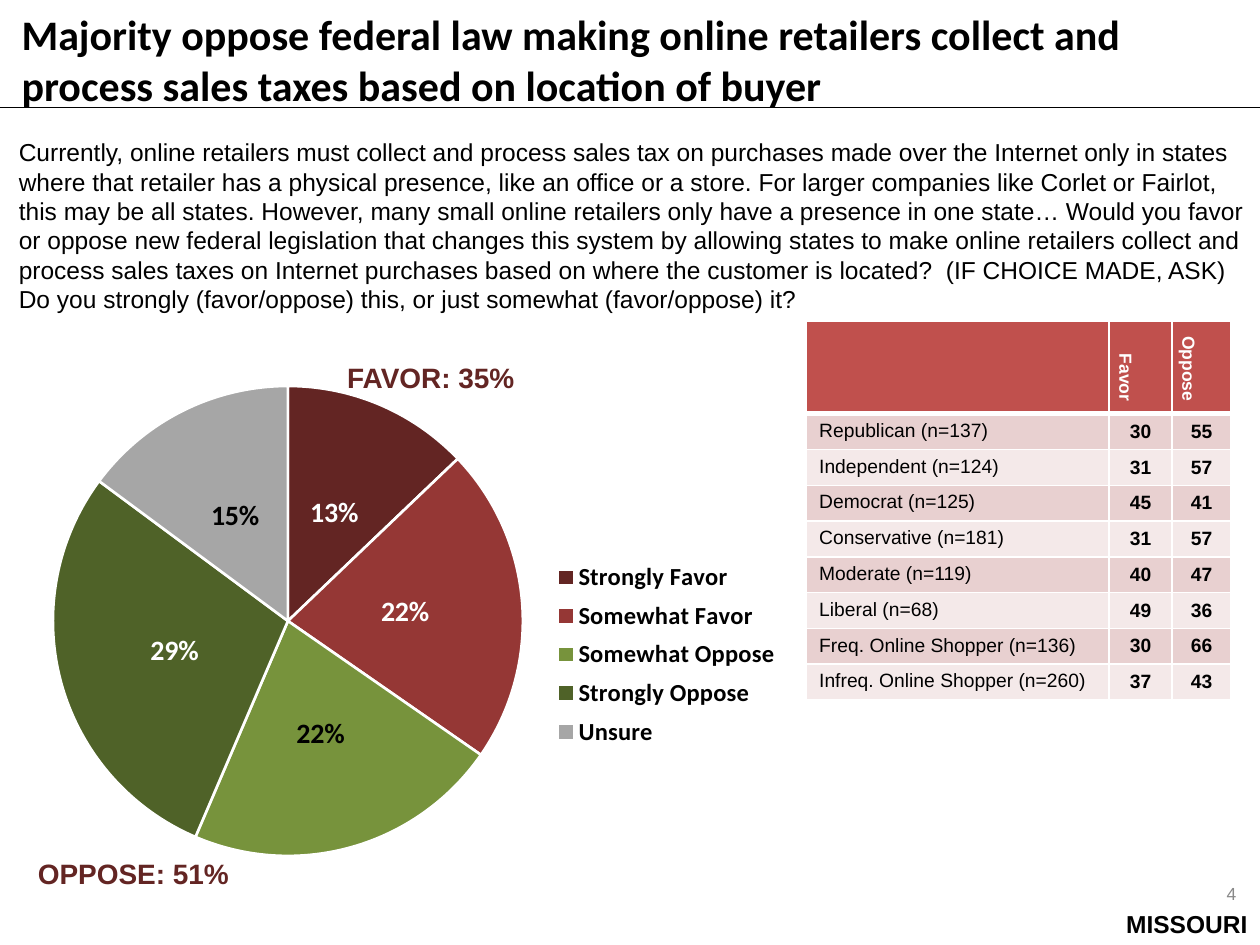
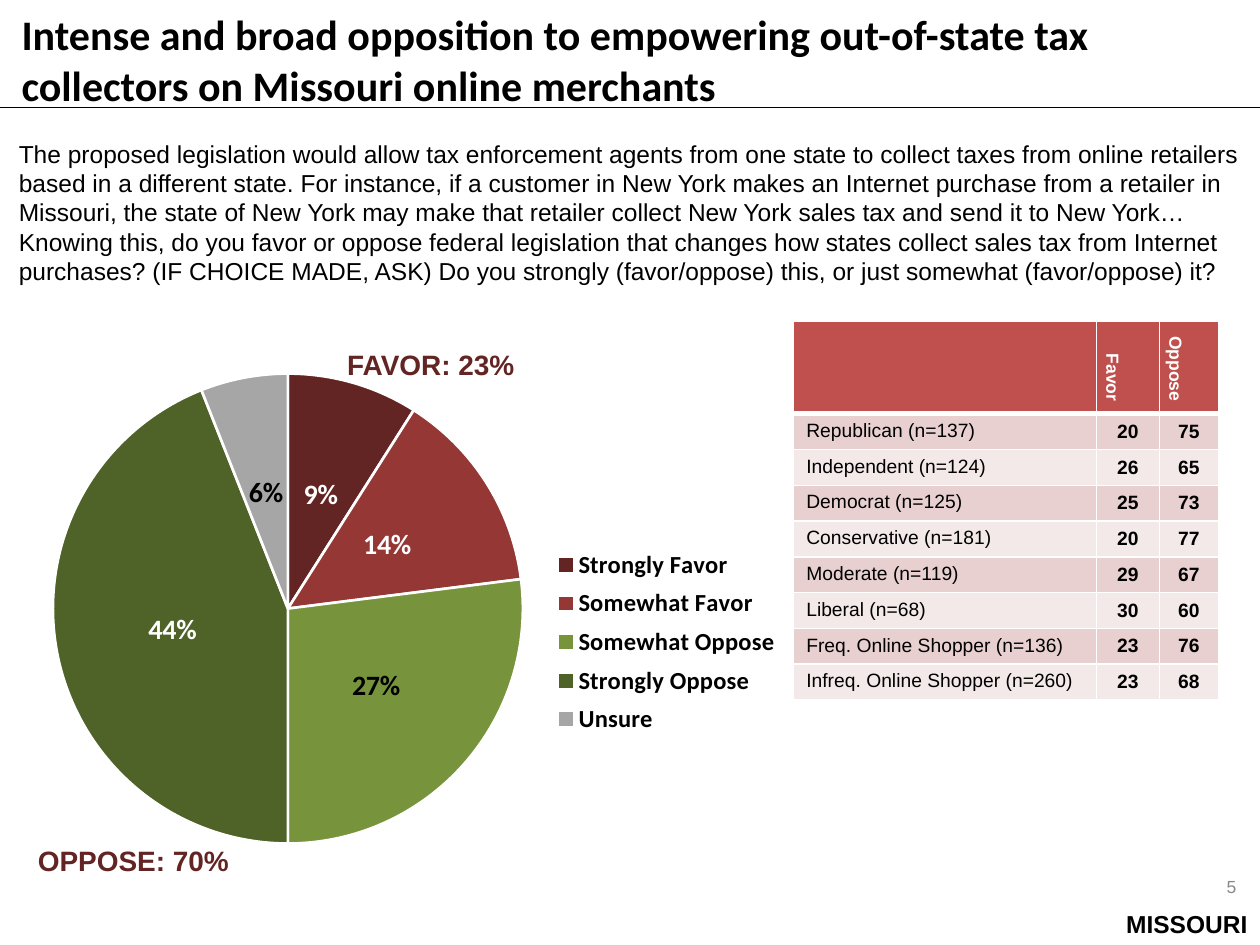
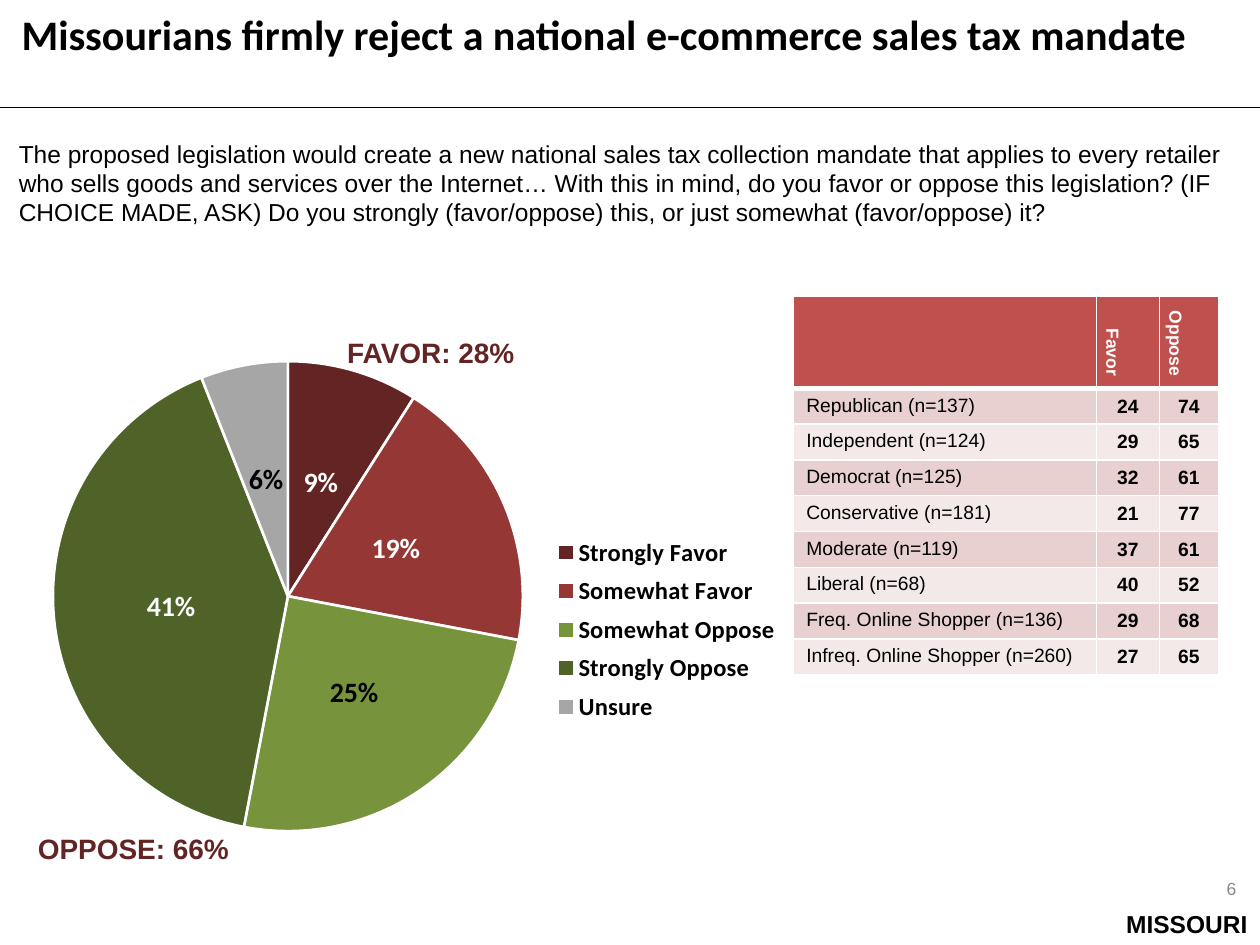
import pptx
import pptx.chart.data
import pptx.dml.color
import pptx.enum.chart
import pptx.enum.shapes
import pptx.enum.text
import pptx.oxml
import pptx.oxml.ns
import pptx.util
from lxml import etree

Cm = pptx.util.Cm
Pt = pptx.util.Pt
Align = pptx.enum.text.PP_ALIGN
Anchor = pptx.enum.text.MSO_ANCHOR
AutoSize = pptx.enum.text.MSO_AUTO_SIZE

# Answers and voter groups asked about on every slide
ANSWERS = {
    "Strongly Favor": "632523",
    "Somewhat Favor": "953735",
    "Somewhat Oppose": "77933C",
    "Strongly Oppose": "4F6228",
    "Unsure": "A6A6A6",
}
DARK_LABELS = ("Somewhat Oppose", "Unsure")
GROUPS = [
    "Republican (n=137)", "Independent (n=124)", "Democrat (n=125)",
    "Conservative (n=181)", "Moderate (n=119)", "Liberal (n=68)",
    "Freq. Online Shopper (n=136)", "Infreq. Online Shopper (n=260)",
]

# What differs from slide to slide
SLIDES = [
    {
        "title": "Majority oppose federal law making online retailers collect and "
                 "process sales taxes based on location of buyer",
        "title_width": 23.32,
        "question": "Currently, online retailers must collect and process sales tax on "
                    "purchases made over the Internet only in states where that retailer has "
                    "a physical presence, like an office or a store. For larger companies "
                    "like Corlet or Fairlot, this may be all states. However, many small "
                    "online retailers only have a presence in one state… Would you favor or "
                    "oppose new federal legislation that changes this system by allowing "
                    "states to make online retailers collect and process sales taxes on "
                    "Internet purchases based on where the customer is located?  (IF CHOICE "
                    "MADE, ASK) Do you strongly (favor/oppose) this, or just somewhat "
                    "(favor/oppose) it?",
        "question_box": (2.64, 3.84),
        "number": "4", "number_top": 17.5,
        "shares": (13, 22, 22, 29, 15), "chart_top": 6.88,
        "favor": "FAVOR: 35%", "oppose": "OPPOSE: 51%",
        "table_at": (16.26, 6.48),
        "by_group": [(30, 55), (31, 57), (45, 41), (31, 57),
                     (40, 47), (49, 36), (30, 66), (37, 43)],
    },
    {
        "title": "Intense and broad opposition to empowering out-of-state tax "
                 "collectors on Missouri online merchants",
        "title_width": 23.32,
        "question": "The proposed legislation would allow tax enforcement agents from one "
                    "state to collect taxes from online retailers based in a different state. "
                    "For instance, if a customer in New York makes an Internet purchase from "
                    "a retailer in Missouri, the state of New York may make that retailer "
                    "collect New York sales tax and send it to New York… Knowing this, do you "
                    "favor or oppose federal legislation that changes how states collect "
                    "sales tax from Internet purchases? (IF CHOICE MADE, ASK) Do you strongly "
                    "(favor/oppose) this, or just somewhat (favor/oppose) it?",
        "question_box": (2.67, 3.25),
        "number": "5", "number_top": 17.37,
        "shares": (9, 14, 27, 44, 6), "chart_top": 6.63,
        "favor": "FAVOR: 23%", "oppose": "OPPOSE: 70%",
        "table_at": (16, 6.48),
        "by_group": [(20, 75), (26, 65), (25, 73), (20, 77),
                     (29, 67), (30, 60), (23, 76), (23, 68)],
    },
    {
        "title": "Missourians firmly reject a national e-commerce sales tax mandate",
        "title_width": 25.22,
        "question": "The proposed legislation would create a new national sales tax "
                    "collection mandate that applies to every retailer who sells goods and "
                    "services over the Internet… With this in mind, do you favor or oppose "
                    "this legislation? (IF CHOICE MADE, ASK) Do you strongly (favor/oppose) "
                    "this, or just somewhat (favor/oppose) it?",
        "question_box": (2.67, 2.06),
        "number": "6", "number_top": 17.4,
        "shares": (9, 19, 25, 41, 6), "chart_top": 6.38,
        "favor": "FAVOR: 28%", "oppose": "OPPOSE: 66%",
        "table_at": (16, 5.97),
        "by_group": [(24, 74), (29, 65), (32, 61), (21, 77),
                     (37, 61), (40, 52), (29, 68), (27, 65)],
    },
]


def color(hex_string):
    return pptx.dml.color.RGBColor.from_string(hex_string)


def fill_solid(item, hex_string):
    item.fill.solid()
    item.fill.fore_color.rgb = color(hex_string)


def set_font(font, size, ink="000000", bold=False, name="Arial"):
    font.name, font.size, font.bold = name, Pt(size), bold
    font.color.rgb = color(ink)


def write(text_frame, text, align=Align.LEFT, **font_format):
    paragraph = text_frame.paragraphs[0]
    paragraph.alignment = align
    run = paragraph.add_run()
    run.text = text
    set_font(run.font, **font_format)


def border_cell(cell, top=1, bottom=1):
    """White lines on all four sides of a table cell, widths in points."""
    properties = cell._tc.get_or_add_tcPr()
    widths = {"lnL": 1, "lnR": 1, "lnT": top, "lnB": bottom}
    for position, (tag, width) in enumerate(widths.items()):
        line = pptx.oxml.parse_xml(
            f'<a:{tag} {pptx.oxml.ns.nsdecls("a")} w="{Pt(width)}">'
            f'<a:solidFill><a:srgbClr val="FFFFFF"/></a:solidFill></a:{tag}>')
        properties.insert(position, line)


def place_in_chart(element, x, y, width, height, inner=False):
    """Fix a plot area or legend at fractions of the chart."""
    for old in element.findall(pptx.oxml.ns.qn("c:layout")):
        element.remove(old)
    target = '<c:layoutTarget val="inner"/>' if inner else ""
    layout = pptx.oxml.parse_xml(
        f'<c:layout {pptx.oxml.ns.nsdecls("c")}><c:manualLayout>{target}'
        f'<c:xMode val="edge"/><c:yMode val="edge"/><c:x val="{x}"/><c:y val="{y}"/>'
        f'<c:w val="{width}"/><c:h val="{height}"/></c:manualLayout></c:layout>')
    position = element.find(pptx.oxml.ns.qn("c:legendPos"))
    if position is None:
        element.insert(0, layout)
    else:
        position.addnext(layout)


class PollDeck:
    ACCENT = "632523"
    HEADER = "C0504D"
    BANDS = ("E8D0D0", "F4E9E9")
    NUMBER_FORMAT = '0"%"'

    def __init__(self):
        self.presentation = pptx.Presentation()
        self.presentation.slide_width = Cm(25.4)
        self.presentation.slide_height = Cm(19.05)
        self.slide = None

    def start_slide(self, title, title_width):
        layout = self.presentation.slide_layouts.get_by_name("Title Only")
        self.slide = self.presentation.slides.add_slide(layout)
        # Footer and rule
        self.text("MISSOURI", 16.81, 18.21, 8.59, 0.86, size=14, bold=True,
                  align=Align.RIGHT)
        self.rule(2.16)
        # Title
        shape = self.slide.shapes.title
        shape.left, shape.top = Cm(0.18), Cm(0.05)
        shape.width, shape.height = Cm(title_width), Cm(2.31)
        shape.text_frame.auto_size = AutoSize.NONE
        shape.text_frame.vertical_anchor = Anchor.TOP
        write(shape.text_frame, title, size=24, bold=True, name="Calibri")

    def rule(self, top):
        connector = self.slide.shapes.add_connector(
            pptx.enum.shapes.MSO_CONNECTOR.STRAIGHT, 0, Cm(top), Cm(25.4), Cm(top))
        connector.line.color.rgb = color("000000")
        connector.line.width = Pt(0.75)
        etree.SubElement(connector._element.spPr, pptx.oxml.ns.qn("a:effectLst"))

    def text(self, text, left, top, width, height, wrap=True, anchor=Anchor.TOP,
             **text_format):
        box = self.slide.shapes.add_textbox(Cm(left), Cm(top), Cm(width), Cm(height))
        box.text_frame.word_wrap = wrap
        box.text_frame.vertical_anchor = anchor
        write(box.text_frame, text, **text_format)

    def total(self, text, left, top, width):
        self.text(text, left, top, width, 0.94, wrap=False, size=16, bold=True,
                  ink=self.ACCENT, align=Align.CENTER)

    def pie(self, shares, top):
        data = pptx.chart.data.CategoryChartData(number_format=self.NUMBER_FORMAT)
        data.categories = list(ANSWERS)
        data.add_series("Series 1", shares)
        chart = self.slide.shapes.add_chart(
            pptx.enum.chart.XL_CHART_TYPE.PIE,
            Cm(0.76), Cm(top), Cm(15.06), Cm(11.28), data).chart
        chart.has_title = False
        set_font(chart.font, 10, name="Calibri")
        # Legend
        chart.has_legend = True
        chart.legend.position = pptx.enum.chart.XL_LEGEND_POSITION.RIGHT
        chart.legend.include_in_layout = False
        set_font(chart.legend.font, 14, bold=True, name="Calibri")
        # Value labels
        plot = chart.plots[0]
        plot.vary_by_categories = True
        series = plot.series[0]
        labels = series.data_labels
        labels.show_value, labels.show_percentage = True, False
        labels.number_format = self.NUMBER_FORMAT
        labels.number_format_is_linked = False
        center = pptx.enum.chart.XL_LABEL_POSITION.CENTER
        labels.position = center
        set_font(labels.font, 16, "FFFFFF", bold=True, name="Calibri")
        # Slices
        for index, (answer, slice_color) in enumerate(ANSWERS.items()):
            point = series.points[index]
            fill_solid(point.format, slice_color)
            point.format.line.color.rgb = color("FFFFFF")
            point.format.line.width = Pt(1.5)
            if answer in DARK_LABELS:
                set_font(point.data_label.font, 16, bold=True, name="Calibri")
                point.data_label.position = center
        plot_area = chart._chartSpace.chart.plotArea
        place_in_chart(plot_area, 0.02, 0.08, 0.63, 0.84, inner=True)
        place_in_chart(chart.legend._element, 0.69, 0.38, 0.31, 0.36)

    def group_table(self, left, top, by_group):
        widths, header_height, row_height = (6.1, 1.27, 1.19), 1.86, 0.72
        rows = [("", "Favor", "Oppose")]
        rows += [(group, *values) for group, values in zip(GROUPS, by_group)]
        table = self.slide.shapes.add_table(
            len(rows), len(widths), Cm(left), Cm(top), Cm(sum(widths)),
            Cm(header_height + row_height * len(GROUPS))).table
        for column, width in zip(table.columns, widths):
            column.width = Cm(width)
        for row_index, row in enumerate(rows):
            is_header = row_index == 0
            table.rows[row_index].height = Cm(header_height if is_header else row_height)
            for column_index, value in enumerate(row):
                cell = table.cell(row_index, column_index)
                band = self.HEADER if is_header else self.BANDS[(row_index - 1) % 2]
                fill_solid(cell, band)
                border_cell(cell, top=3 if row_index == 1 else 1,
                            bottom=3 if is_header else 1)
                is_label = column_index == 0
                if is_header and is_label:
                    continue
                cell.vertical_anchor = Anchor.TOP if is_label else Anchor.MIDDLE
                if is_header:
                    cell._tc.get_or_add_tcPr().set("vert", "vert")
                    write(cell.text_frame, value, align=Align.RIGHT, size=10,
                          ink="FFFFFF", bold=True)
                else:
                    write(cell.text_frame, str(value), size=11, bold=not is_label,
                          align=Align.LEFT if is_label else Align.CENTER)


def main():
    deck = PollDeck()
    for content in SLIDES:
        deck.start_slide(content["title"], content["title_width"])
        deck.text(content["number"], 21.82, content["number_top"], 3.35, 1.02,
                  anchor=Anchor.MIDDLE, align=Align.RIGHT, size=10, ink="898989")
        question_top, question_height = content["question_box"]
        deck.text(content["question"], 0.13, question_top, 25.27, question_height, size=14)
        chart_top = content["chart_top"]
        deck.pie(content["shares"], chart_top)
        deck.group_table(*content["table_at"], content["by_group"])
        deck.total(content["favor"], 6.73, chart_top + 0.26, 3.91)
        deck.total(content["oppose"], 0.48, chart_top + 10.26, 4.42)
    deck.presentation.save("out.pptx")


if __name__ == "__main__":
    main()
